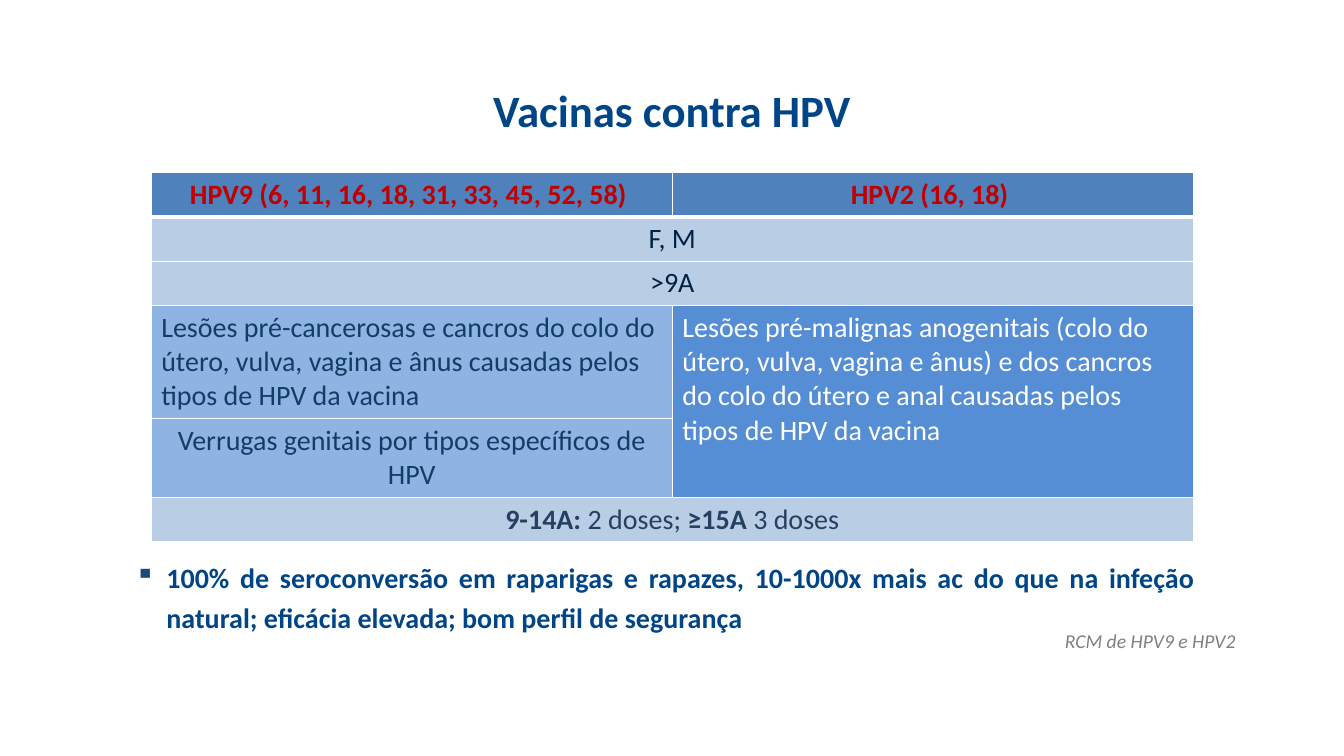
from dataclasses import dataclass

from lxml.etree import SubElement
from pptx import Presentation
from pptx.dml.color import RGBColor as Color
from pptx.enum.text import MSO_ANCHOR as Anchor, MSO_AUTO_SIZE as AutoSize, PP_ALIGN as Align
from pptx.oxml import parse_xml
from pptx.oxml.ns import nsdecls, qn
from pptx.util import Pt


@dataclass(frozen=True)
class Theme:
    font: str = "Calibri"
    title_size: int = 32
    body_size: int = 20
    source_size: int = 14
    heading: str = "004586"
    source: str = "808080"
    bullet: str = "1F497D"
    header_text: str = "C00000"
    shared_text: str = "002243"
    lesion_text: str = "143D64"
    dose_text: str = "254061"
    white: str = "FFFFFF"
    header_fill: str = "4F81BD"
    shared_fill: str = "B9CDE5"
    hpv9_fill: str = "8EB4E3"
    hpv2_fill: str = "558ED5"


THEME = Theme()


def write(frame, text, size=THEME.body_size, color=THEME.heading, bold=False,
          italic=False, align=Align.LEFT):
    para = frame.paragraphs[0]
    para.alignment = align
    spans = [(text, bold)] if isinstance(text, str) else text
    for words, heavy in spans:
        span = para.add_run()
        span.text = words
        span.font.name = THEME.font
        span.font.size = Pt(size)
        span.font.color.rgb = Color.from_string(color)
        span.font.bold = heavy
        span.font.italic = italic
    return para


def add_text(page, text, left, top, width, height, anchor=Anchor.TOP, **style):
    box = page.shapes.add_textbox(Pt(left), Pt(top), Pt(width), Pt(height))
    frame = box.text_frame
    frame.word_wrap = True
    frame.auto_size = AutoSize.NONE
    frame.vertical_anchor = anchor
    return write(frame, text, **style)


def add_bullet(para, symbol, color, indent):
    properties = para._p.get_or_add_pPr()
    properties.set("marL", str(Pt(indent)))
    properties.set("indent", str(Pt(-indent)))
    tint = SubElement(properties, qn("a:buClr"))
    SubElement(tint, qn("a:srgbClr"), val=color)
    SubElement(properties, qn("a:buChar"), char=symbol)


def set_borders(cell, **widths):
    properties = cell._tc.get_or_add_tcPr()
    for position, side in enumerate("LRTB"):
        width = Pt(widths.get(side, 1))
        properties.insert(position, parse_xml(
            f'<a:ln{side} {nsdecls("a")} w="{width}"><a:solidFill>'
            f'<a:srgbClr val="{THEME.white}"/></a:solidFill></a:ln{side}>'))


def add_grid(page, left, top, column_width, heights, fills):
    shape = page.shapes.add_table(len(heights), len(fills[0]), Pt(left), Pt(top),
                                  Pt(column_width * len(fills[0])), Pt(sum(heights)))
    table = shape.table
    table.first_row = table.horz_banding = False
    for column in table.columns:
        column.width = Pt(column_width)
    for index, (height, colors) in enumerate(zip(heights, fills)):
        table.rows[index].height = Pt(height)
        thick = {0: {"B": 3}, 1: {"T": 3}}.get(index, {})
        for cell, color in zip(table.rows[index].cells, colors):
            cell.fill.solid()
            cell.fill.fore_color.rgb = Color.from_string(color)
            set_borders(cell, **thick)
    return table


def add_vaccine_table(page):
    line, header, shared = 31.7, [THEME.header_fill] * 2, [THEME.shared_fill] * 2
    lesions = [THEME.hpv9_fill, THEME.hpv2_fill]
    table = add_grid(page, 108, 123.1, 372.2, [line, line, line, 80.6, 56.2, line],
                     [header, shared, shared, lesions, lesions, shared])
    for row in (1, 2, 5):
        table.cell(row, 0).merge(table.cell(row, 1))
    table.cell(3, 1).merge(table.cell(4, 1))
    doses = [("9-14A: ", True), ("2 doses; ", False), ("≥15A ", True), ("3 doses", False)]
    entries = [
        (0, 0, "HPV9 (6, 11, 16, 18, 31, 33, 45, 52, 58) ", THEME.header_text, Align.CENTER),
        (0, 1, "HPV2 (16, 18) ", THEME.header_text, Align.CENTER),
        (1, 0, "F, M", THEME.shared_text, Align.CENTER),
        (2, 0, ">9A", THEME.shared_text, Align.CENTER),
        (3, 0, "Lesões pré-cancerosas e cancros do colo do útero, vulva, vagina e ânus "
               "causadas pelos tipos de HPV da vacina", THEME.lesion_text, Align.LEFT),
        (3, 1, "Lesões pré-malignas anogenitais (colo do útero, vulva, vagina e ânus) e dos "
               "cancros do colo do útero e anal causadas pelos tipos de HPV da vacina",
         THEME.white, Align.LEFT),
        (4, 0, "Verrugas genitais por tipos específicos de HPV", THEME.lesion_text, Align.CENTER),
        (5, 0, doses, THEME.dose_text, Align.CENTER),
    ]
    for row, column, text, color, align in entries:
        write(table.cell(row, column).text_frame, text, color=color, bold=row == 0, align=align)


def main():
    deck = Presentation()
    deck.slide_width, deck.slide_height = Pt(960), Pt(540)
    page = deck.slides.add_slide(deck.slide_layouts[6])
    add_text(page, "RCM de HPV9 e HPV2", -22.3, 445.7, 912.2, 23, size=THEME.source_size,
             color=THEME.source, italic=True, align=Align.RIGHT)
    add_text(page, "Vacinas contra HPV", 48, 54.7, 864, 47.5, anchor=Anchor.MIDDLE,
             size=THEME.title_size, bold=True, align=Align.CENTER)
    add_vaccine_table(page)
    finding = add_text(page, "100% de seroconversão em raparigas e rapazes, 10-1000x mais ac do "
                       "que na infeção natural; eficácia elevada; bom perfil de segurança",
                       89.3, 391.7, 771.1, 63.4, bold=True, align=Align.JUSTIFY)
    add_bullet(finding, "▪", THEME.bullet, 22.5)
    finding.line_spacing = 1.2
    deck.save("out.pptx")


if __name__ == "__main__":
    main()
